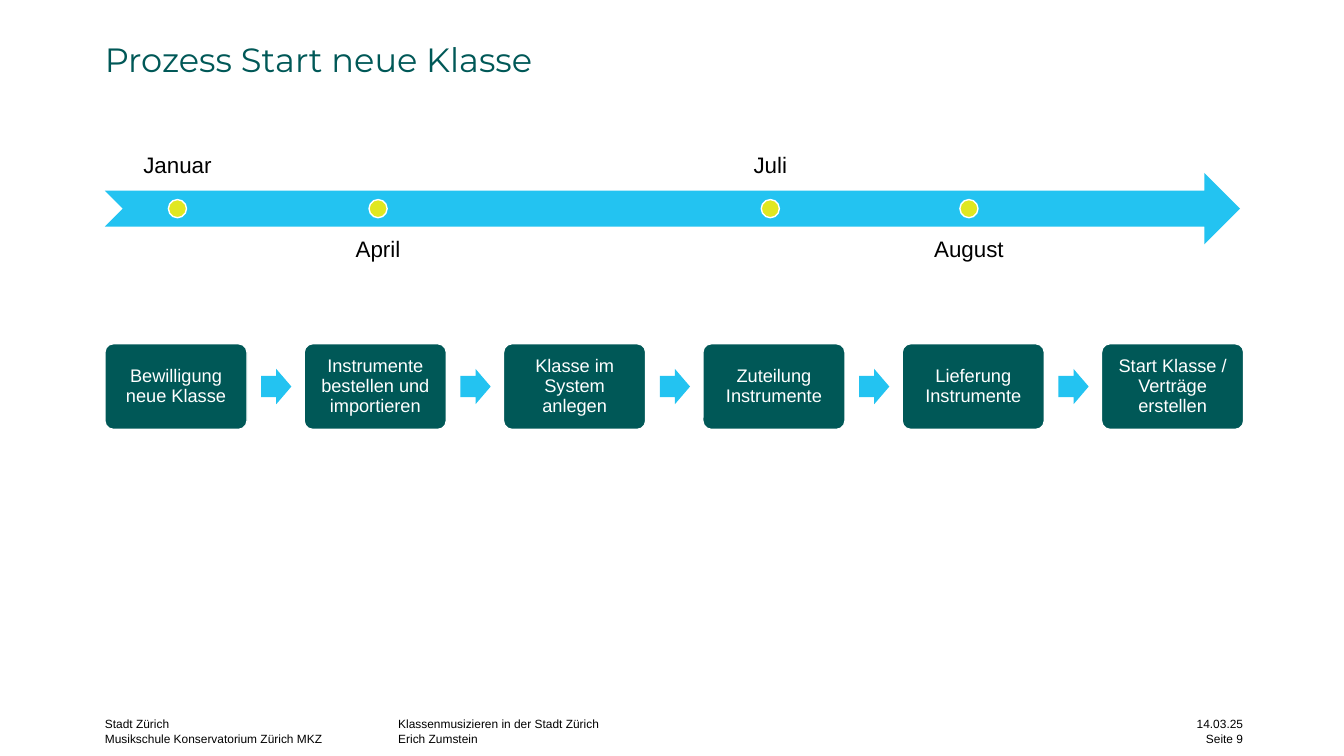
import pptx
import pptx.util
import pptx.dml.color
import pptx.enum.shapes
import pptx.enum.text

COLORS = {"green": "005857", "blue": "23C3F1", "lime": "E0E721",
          "white": "FFFFFF", "black": "000000"}
FORMS = pptx.enum.shapes.MSO_SHAPE
ALIGN = pptx.enum.text.PP_ALIGN
ANCHOR = pptx.enum.text.MSO_ANCHOR

# Grid: 75 rows fill the height, columns are as wide as rows are high
HIGH = pptx.util.Inches(7.5)
CELL = HIGH / 75
LEFT, WIDE = 10.4, 113      # content area in columns
STEP = 19.77                # columns from one process box to the next
BAND = 20.7                 # row of the timeline's centre

STEPS = ["Bewilligung neue Klasse", "Instrumente bestellen und importieren",
         "Klasse im System anlegen", "Zuteilung Instrumente",
         "Lieferung Instrumente", "Start Klasse / Verträge erstellen"]
MONTHS = [("Januar", 17.6, True), ("April", 37.5, False),
          ("Juli", 76.4, True), ("August", 96.1, False)]
NOTES = [
    (LEFT, 25.2, ALIGN.LEFT,
     ["Stadt Zürich", "Musikschule Konservatorium Zürich MKZ"]),
    (39.5, 69.3, ALIGN.LEFT,
     ["Klassenmusizieren in der Stadt Zürich", "Erich Zumstein"]),
    (112.3, 11, ALIGN.RIGHT, ["14.03.25", "Seite 9"]),
]


def area(*cells):
    return [round(cell * CELL) for cell in cells]


def color(name):
    return pptx.dml.color.RGBColor.from_string(COLORS[name])


def write(shape, lines, size, tone="black", font="Arial", align=ALIGN.CENTER,
          anchor=ANCHOR.TOP, pad=0, space=0.9):
    frame = shape.text_frame
    frame.word_wrap = True
    frame.auto_size = pptx.enum.text.MSO_AUTO_SIZE.NONE
    frame.vertical_anchor = anchor
    frame.margin_left = frame.margin_right = round(pad * CELL)
    frame.margin_top = frame.margin_bottom = round(pad * CELL)
    frame.text = "\n".join(lines)
    for para in frame.paragraphs:
        para.alignment = align
        para.line_spacing = space
        para.font.size = pptx.util.Pt(size)
        para.font.name = font
        para.font.color.rgb = color(tone)


def draw(slide, form, place, fill, edge=None, adjust=()):
    shape = slide.shapes.add_shape(form, *area(*place))
    shape.shadow.inherit = False
    shape.fill.solid()
    shape.fill.fore_color.rgb = color(fill)
    if edge:
        shape.line.color.rgb = color(edge)
        shape.line.width = pptx.util.Pt(1)
    else:
        shape.line.fill.background()
    for index, value in enumerate(adjust):
        shape.adjustments[index] = value
    return shape


def head(slide, text):
    title = slide.shapes.title
    title.left, title.top, title.width, title.height = area(
        LEFT, 3.3, WIDE, 4.7)
    write(title, [text], 24, "green", "Montserrat", ALIGN.LEFT, space=1.13)


def month(slide, name, mid, above):
    wide, high, dot = 24.4, 7.1, 1.8
    top = 11.8 if above else 22.4
    label = slide.shapes.add_textbox(*area(mid - wide / 2, top, wide, high))
    write(label, [name], 16, pad=1.2,
          anchor=ANCHOR.BOTTOM if above else ANCHOR.TOP)
    draw(slide, FORMS.OVAL, (mid - dot / 2, BAND - dot / 2, dot, dot),
         "lime", "white")


def stage(slide, index, text):
    left = LEFT + index * STEP
    box = draw(slide, FORMS.ROUNDED_RECTANGLE, (left, 34.1, 14.1, 8.5),
               "green", "white", [0.1])
    write(box, [text], 13, "white", anchor=ANCHOR.MIDDLE, pad=0.7)
    if index < len(STEPS) - 1:
        draw(slide, FORMS.RIGHT_ARROW, (left + 15.5, 36.6, 3, 3.5),
             "blue", adjust=[0.6, 0.5])


def main():
    deck = pptx.Presentation()
    deck.slide_width = pptx.util.Inches(13.33)
    deck.slide_height = HIGH
    slide = deck.slides.add_slide(deck.slide_layouts.get_by_name("Title Only"))
    head(slide, "Prozess Start neue Klasse")

    # Timeline
    draw(slide, FORMS.NOTCHED_RIGHT_ARROW, (LEFT, BAND - 3.55, 112.6, 7.1),
         "blue")
    for name, mid, above in MONTHS:
        month(slide, name, mid, above)

    # Process chain
    for index, text in enumerate(STEPS):
        stage(slide, index, text)

    # Footer
    for left, wide, align, lines in NOTES:
        note = slide.shapes.add_textbox(*area(left, 71.1, wide, 3.9))
        write(note, lines, 8.5, align=align, space=pptx.util.Pt(10.5))

    deck.save("out.pptx")


if __name__ == "__main__":
    main()
